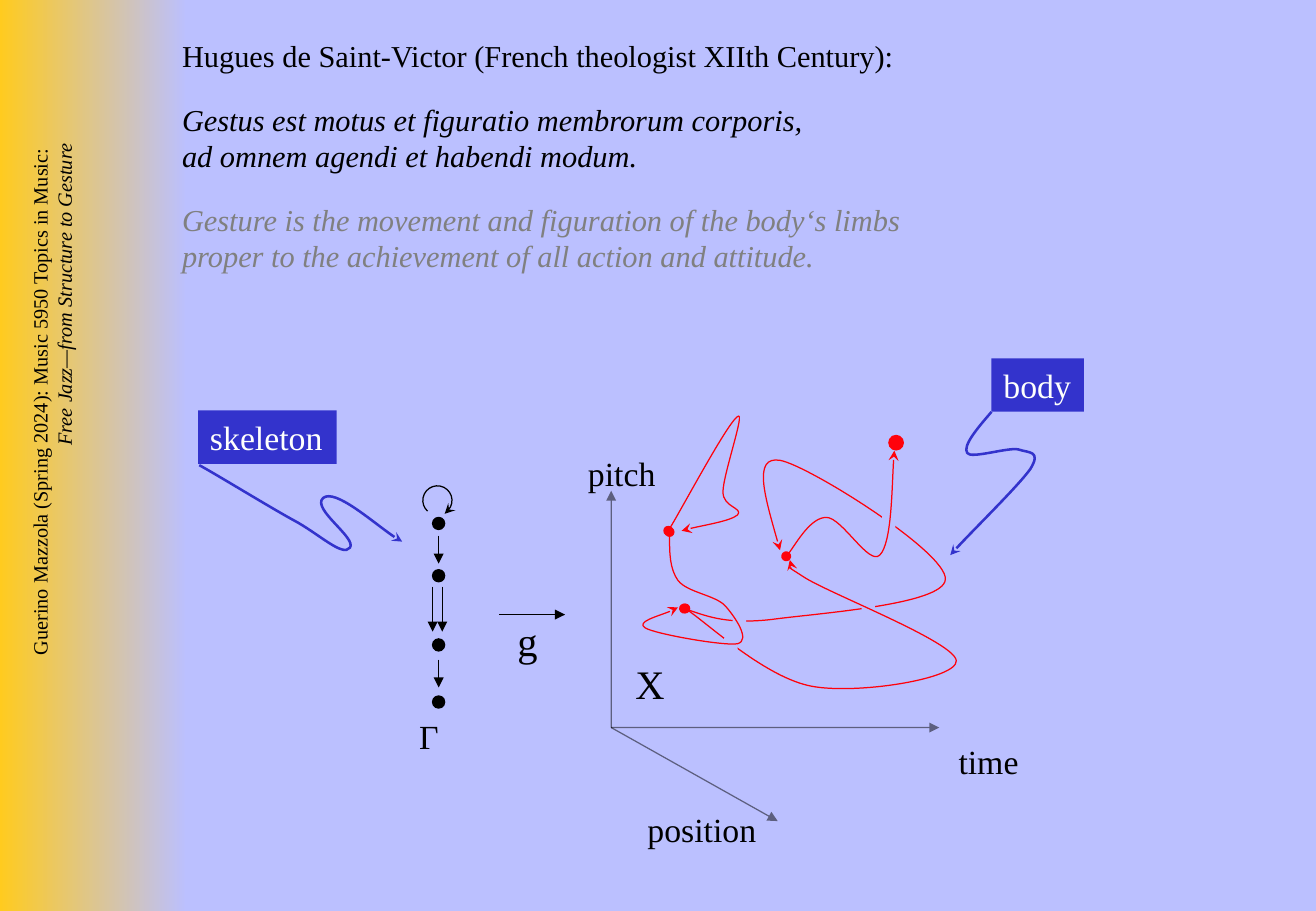
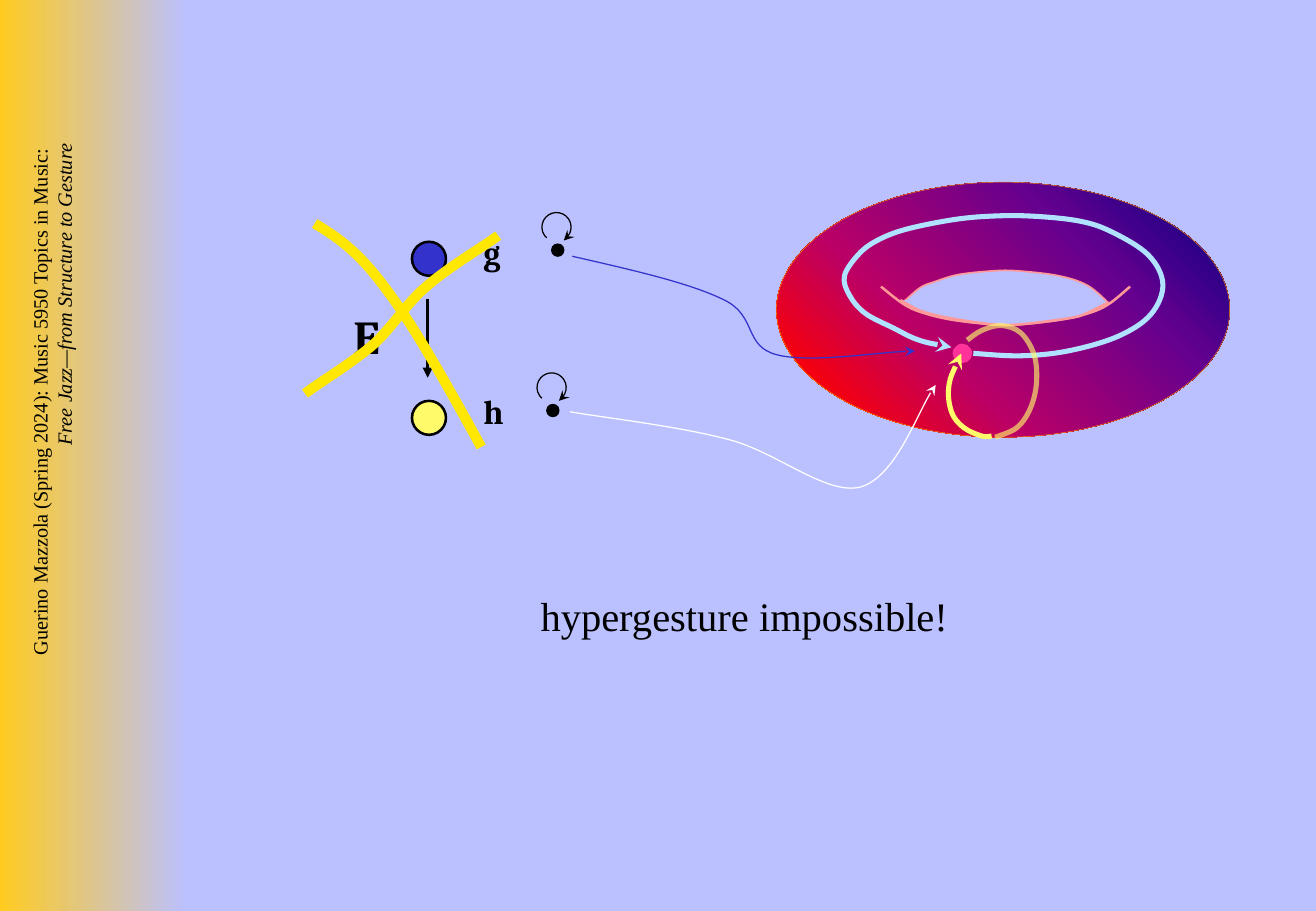
"""Build two slides on musical gestures: skeleton and body, and an impossible hypergesture."""
from dataclasses import dataclass
from typing import Any, Optional

from lxml.etree import SubElement
from pptx import Presentation
from pptx.dml.color import RGBColor
from pptx.enum.shapes import MSO_CONNECTOR, MSO_SHAPE
from pptx.enum.text import MSO_AUTO_SIZE, PP_ALIGN
from pptx.oxml.ns import qn
from pptx.util import Cm, Pt

ELLIPSE = MSO_SHAPE.OVAL
RECTANGLE = MSO_SHAPE.RECTANGLE
STRAIGHT = MSO_CONNECTOR.STRAIGHT
FIT_SHAPE = MSO_AUTO_SIZE.SHAPE_TO_FIT_TEXT
RIGHT = PP_ALIGN.RIGHT

SERIF = "Times New Roman"
CAMBRIA = "Cambria"
BACKGROUND = "BBC0FF"
GOLD = "FFCB1F"
BLACK = "000000"
GRAY = "808080"
WHITE = "FEFFFD"
BLUE = "3333CC"
RED = "FF020B"
YELLOW = "FFFA6A"
ROSE = "FF9999"
CROSS = "FFE700"
TORUS_STOPS = ((0, "FF8200"), (10, "FF0000"), (35, "BA0066"), (70, "66008F"), (100, "000082"))
LOOP_TILT = 311.2


@dataclass(frozen=True)
class Label:
    text: str
    left: float
    top: float
    width: float
    height: float
    size: int = 20
    color: str = BLACK
    fill: Optional[str] = None
    font: str = SERIF
    bold: bool = False


@dataclass(frozen=True)
class Stroke:
    color: str = BLACK
    width: float = 0.75
    head: Optional[str] = None
    tail: Optional[str] = None
    opacity: int = 100


@dataclass(frozen=True)
class Curve:
    coordinates: tuple[float, ...]
    stroke: Stroke
    fill: Optional[str] = None
    smooth: bool = False
    gaps: tuple[tuple[float, float], ...] = ()


ARROW = Stroke(tail="triangle")
AXIS = Stroke(tail="triangle", opacity=50)
GESTURE = Stroke(RED, head="oval", tail="stealth")
POINTER = Stroke(BLUE, 1.5, tail="stealth")

GESTURE_LABELS = (
    Label("Γ", 3.35, 5.84, 0.38, 0.44),
    Label("position", 5.23, 6.61, 1.1, 0.43, fill=BACKGROUND),
    Label("pitch", 4.74, 3.68, 0.76, 0.44),
    Label("time", 7.79, 6.05, 0.7, 0.44, fill=BACKGROUND),
    Label("X", 5.13, 5.38, 0.44, 0.5, 24),
    Label("g", 4.16, 5.02, 0.37, 0.5, 24),
    Label("body", 8.16, 2.95, 0.76, 0.44, color=WHITE, fill=BLUE),
    Label("skeleton", 1.63, 3.38, 1.14, 0.44, color=WHITE, fill=BLUE),
)
GESTURE_CURVES = (
    Curve((5.63, 5.01, 5.81, 5.07, 5.99, 5.14, 6.35, 5.1, 6.71, 5.05, 7.77, 4.98, 7.78, 4.77,
           7.8, 4.55, 6.65, 3.83, 6.42, 3.79, 6.19, 3.75, 6.31, 4.14, 6.42, 4.53),
          GESTURE, gaps=((7.26, 4.25), (7.09, 4.93), (6.03, 5.06))),
    Curve((5.5, 4.37, 5.6, 4.21, 5.99, 3.48, 6.07, 3.43, 6.14, 3.37, 5.95, 3.91, 5.95, 4.05,
           5.95, 4.18, 6.12, 4.18, 6.07, 4.24, 6.01, 4.29, 5.7, 4.34, 5.61, 4.37), GESTURE),
    Curve((5.64, 5.01, 5.81, 5.12, 6.31, 5.58, 6.68, 5.65, 7.05, 5.72, 7.88, 5.59, 7.87, 5.44,
           7.86, 5.29, 6.86, 4.9, 6.63, 4.76, 6.41, 4.62, 6.53, 4.64, 6.5, 4.61),
          GESTURE, gaps=((5.96, 5.25),)),
    Curve((6.47, 4.58, 6.52, 4.53, 6.67, 4.26, 6.8, 4.26, 6.93, 4.26, 7.15, 4.66, 7.24, 4.57,
           7.34, 4.47, 7.34, 3.89, 7.36, 3.71), GESTURE),
    Curve((5.51, 4.38, 5.51, 4.53, 5.51, 4.68, 5.58, 4.78, 5.66, 4.88, 5.89, 4.9, 5.97, 4.99,
           6.05, 5.08, 6.18, 5.27, 6.07, 5.3, 5.96, 5.32, 5.39, 5.22, 5.31, 5.17,
           5.23, 5.12, 5.53, 5.04, 5.58, 5), GESTURE),
    Curve((8.16, 3.39, 8.04, 3.53, 7.92, 3.67, 7.96, 3.73, 7.99, 3.78, 8.3, 3.68, 8.38, 3.7,
           8.47, 3.73, 8.57, 3.71, 8.48, 3.86, 8.38, 4, 7.95, 4.42, 7.82, 4.57), POINTER),
    Curve((1.64, 3.83, 1.77, 3.9, 2.21, 4.17, 2.41, 4.28, 2.62, 4.39, 2.82, 4.59, 2.88, 4.51,
           2.94, 4.43, 2.56, 4.19, 2.66, 4.1, 2.76, 4.02, 3.17, 4.39, 3.31, 4.46), POINTER),
)
TORUS_HOLE = (
    Curve((7.25, 2.36, 7.43, 2.5, 7.58, 2.57, 7.82, 2.63, 8.16, 2.67, 8.39, 2.67, 8.79, 2.62,
           9.08, 2.53, 9.3, 2.36), Stroke(ROSE, 1.5), smooth=True),
    Curve((7.42, 2.5, 7.57, 2.37, 7.69, 2.32, 7.89, 2.26, 8.18, 2.23, 8.37, 2.23, 8.71, 2.27,
           8.95, 2.35, 9.13, 2.5), Stroke(ROSE, 1), BACKGROUND, True),
    Curve((7.41, 2.47, 7.58, 2.56, 7.82, 2.62, 8.17, 2.67, 8.4, 2.67, 8.8, 2.62, 8.94, 2.58,
           9.12, 2.49), Stroke(ROSE, 1.5), BACKGROUND, True),
)
TORUS_CURVES = (
    Curve((8.01, 2.91, 8.4, 2.93, 8.79, 2.89, 9.2, 2.77, 9.47, 2.59, 9.57, 2.34, 9.45, 2.1,
           9.15, 1.91, 8.88, 1.82, 8.49, 1.78, 8.16, 1.78, 7.84, 1.81, 7.45, 1.89, 7.22, 1.98,
           7.07, 2.09, 6.95, 2.27, 6.99, 2.43, 7.12, 2.58, 7.35, 2.7, 7.56, 2.8, 7.83, 2.86),
          Stroke("B0E2FF", 3, tail="stealth"), smooth=True),
    Curve((4.71, 2.11, 5.19, 2.22, 5.68, 2.33, 5.96, 2.47, 6.23, 2.6, 6.12, 2.85, 6.39, 2.92,
           6.65, 2.99, 7.29, 2.89, 7.53, 2.89), Stroke(BLUE, tail="stealth")),
    Curve((7.91, 2.91, 7.81, 3.17, 7.83, 3.39, 7.93, 3.52, 8.08, 3.59, 8.16, 3.59),
          Stroke(YELLOW, 3, head="stealth"), smooth=True),
    Curve((8.19, 3.6, 8.37, 3.52, 8.48, 3.36, 8.53, 3.15, 8.51, 2.92, 8.4, 2.74, 8.24, 2.68,
           8.08, 2.72, 7.96, 2.8), Stroke(YELLOW, 3, opacity=64), smooth=True),
    Curve((4.69, 3.39, 4.91, 3.43, 5.6, 3.51, 6, 3.62, 6.39, 3.72, 6.8, 4.08, 7.08, 4.01,
           7.36, 3.93, 7.57, 3.34, 7.7, 3.17), Stroke("FFFFFF", tail="stealth")),
)
CROSS_CURVES = (
    Curve((4.1, 1.94, 4.01, 2.01, 3.69, 2.2, 3.52, 2.35, 3.35, 2.49, 3.24, 2.68, 3.08, 2.83,
           2.91, 2.98, 2.63, 3.15, 2.51, 3.24), Stroke(CROSS, 6)),
    Curve((2.59, 1.84, 2.77, 1.95, 2.94, 2.06, 3.17, 2.37, 3.4, 2.67, 3.68, 3.17, 3.96, 3.68),
          Stroke(CROSS, 6)),
)
TORUS_LABELS = (
    Label("E", 2.81, 2.48, 0.45, 0.57, 28, font=CAMBRIA, bold=True),
    Label("g", 3.88, 1.86, 0.36, 0.43, font=CAMBRIA, bold=True),
    Label("h", 3.88, 3.17, 0.36, 0.43, font=CAMBRIA, bold=True),
    Label("hypergesture impossible!", 4.35, 4.82, 3.56, 0.5, 24),
)


def inches(value: float) -> Cm:
    """Turn a length in inches into a Cm length."""
    return Cm(value * 2.54)


def rgb(color: str) -> RGBColor:
    """Turn a hex string into a colour."""
    return RGBColor.from_string(color)


def set_fill(shape: Any, color: Optional[str]) -> None:
    """Fill a shape with one colour, or leave it empty."""
    if color is None:
        shape.fill.background()
    else:
        shape.fill.solid()
        shape.fill.fore_color.rgb = rgb(color)


def set_gradient(shape: Any, stops: tuple[tuple[int, str], ...], angle: int) -> None:
    """Fill a shape with a linear gradient."""
    shape.fill.gradient()
    shape.fill.gradient_angle = angle
    stop_list = next(shape.element.iter(qn("a:gsLst")))
    for stop in list(stop_list):
        stop_list.remove(stop)
    for position, color in stops:
        stop = SubElement(stop_list, qn("a:gs"), pos=str(position * 1000))
        SubElement(stop, qn("a:srgbClr"), val=color)


def set_stroke(shape: Any, stroke: Stroke) -> None:
    """Give a shape or connector its line, opacity and arrowheads."""
    shape.line.width = Pt(stroke.width)
    shape.line.color.rgb = rgb(stroke.color)
    line = shape.element.spPr.find(qn("a:ln"))
    if stroke.opacity < 100:
        color = next(line.iter(qn("a:srgbClr")))
        SubElement(color, qn("a:alpha"), val=str(stroke.opacity * 1000))
    for tag, kind in (("a:headEnd", stroke.head), ("a:tailEnd", stroke.tail)):
        if kind:
            SubElement(line, qn(tag), type=kind)


def add_preset(slide: Any, kind: Any, left: float, top: float, width: float, height: float,
               fill: Optional[str] = None, stroke: Optional[Stroke] = None,
               rotation: float = 0) -> Any:
    """Add a preset shape without shadow."""
    shape = slide.shapes.add_shape(kind, inches(left), inches(top), inches(width), inches(height))
    shape.shadow.inherit = False
    shape.rotation = rotation
    set_fill(shape, fill)
    if stroke:
        set_stroke(shape, stroke)
    else:
        shape.line.fill.background()
    return shape


def add_arrow(slide: Any, start: tuple[float, float], end: tuple[float, float],
              stroke: Stroke = ARROW) -> None:
    """Add a straight arrow."""
    connector = slide.shapes.add_connector(STRAIGHT, *(inches(value) for value in start + end))
    set_stroke(connector, stroke)
    SubElement(connector.element.spPr, qn("a:effectLst"))


def smooth_points(anchors: list[tuple[float, float]]) -> list[tuple[float, float]]:
    """Give the Bezier points of a smooth curve through the anchors."""
    padded = [anchors[0], *anchors, anchors[-1]]
    points = [anchors[0]]
    for before, start, end, after in zip(padded, padded[1:], padded[2:], padded[3:]):
        points.append((start[0] + (end[0] - before[0]) / 6, start[1] + (end[1] - before[1]) / 6))
        points.append((end[0] - (after[0] - start[0]) / 6, end[1] - (after[1] - start[1]) / 6))
        points.append(end)
    return points


def add_curve(slide: Any, curve: Curve) -> None:
    """Add a Bezier curve and the gaps cut into it."""
    points = list(zip(curve.coordinates[::2], curve.coordinates[1::2]))
    if curve.smooth:
        points = smooth_points(points)
    vertices = [(inches(x), inches(y)) for x, y in points]
    builder = slide.shapes.build_freeform(*vertices[0])
    builder.add_line_segments(vertices[1:], close=False)
    shape = builder.convert_to_shape()
    segments = list(shape.element.iter(qn("a:lnTo")))
    outline = segments[0].getparent()
    for index in range(0, len(segments), 3):
        bezier = SubElement(outline, qn("a:cubicBezTo"))
        for segment in segments[index:index + 3]:
            bezier.append(segment[0])
            outline.remove(segment)
    shape.shadow.inherit = False
    set_fill(shape, curve.fill)
    set_stroke(shape, curve.stroke)
    for left, top in curve.gaps:
        add_preset(slide, RECTANGLE, left, top, 0.11, 0.11, BACKGROUND)


def add_text(slide: Any, label: Label, wrap: bool = False) -> Any:
    """Add a text box, one paragraph a line of the label."""
    shape = slide.shapes.add_textbox(inches(label.left), inches(label.top),
                                     inches(label.width), inches(label.height))
    if label.fill:
        set_fill(shape, label.fill)
    frame = shape.text_frame
    frame.word_wrap = wrap
    frame.auto_size = FIT_SHAPE
    frame.text = label.text
    for paragraph in frame.paragraphs:
        for run in paragraph.runs:
            run.font.name = label.font
            run.font.size = Pt(label.size)
            run.font.bold = label.bold
            run.font.color.rgb = rgb(label.color)
    for line_break in shape.element.iter(qn("a:br")):
        SubElement(line_break, qn("a:rPr"), sz=str(label.size * 100))
    return shape


def add_node(slide: Any, x: float, y: float) -> None:
    """Add a black vertex centred on a point."""
    add_preset(slide, ELLIPSE, x - 0.05, y - 0.05, 0.1, 0.1, BLACK, Stroke())


def add_loop(slide: Any, x: float, y: float) -> None:
    """Add a vertex with a loop arrow above it."""
    add_preset(slide, ELLIPSE, x - 0.13, y - 0.31, 0.24, 0.24, None, Stroke(), LOOP_TILT)
    add_preset(slide, RECTANGLE, x - 0.08, y - 0.16, 0.15, 0.15, BACKGROUND, None, LOOP_TILT)
    add_arrow(slide, (x + 0.1, y - 0.13), (x + 0.05, y - 0.08), Stroke(tail="stealth"))
    add_node(slide, x, y)


def add_course_slide(presentation: Any) -> Any:
    """Add a blank slide with the gold band and the course title."""
    slide = presentation.slides.add_slide(presentation.slide_layouts[6])
    set_fill(slide.background, BACKGROUND)
    band = add_preset(slide, RECTANGLE, 0, 0, 1.54, 7.5)
    set_gradient(band, ((0, GOLD), (100, BACKGROUND)), 0)
    course = add_text(slide, Label(
        "Guerino Mazzola (Spring 2024): Music 5950 Topics in Music: \v"
        "Free Jazz—from Structure to Gesture", -2.4, 3.66, 5.65, 0.5, 12), wrap=True)
    course.rotation = 270
    paragraph = course.text_frame.paragraphs[0]
    paragraph.alignment = RIGHT
    paragraph.runs[1].font.italic = True
    return slide


def build_gesture_slide(presentation: Any) -> None:
    """Draw the quotation and the gesture from skeleton to body."""
    slide = add_course_slide(presentation)
    quotation = add_text(slide, Label(
        "Hugues de Saint-Victor (French theologist XIIth Century):\n"
        "Gestus est motus et figuratio membrorum corporis,\vad omnem agendi et habendi modum.\n"
        "Gesture is the movement and figuration of the body‘s limbs \v"
        "proper to the achievement of all action and attitude.", 1.4, 0.26, 9.43, 2.06, 18), True)
    for index, paragraph in enumerate(quotation.text_frame.paragraphs):
        paragraph.space_after = Pt(16)
        for run in paragraph.runs:
            run.font.italic = index > 0
            run.font.color.rgb = rgb(GRAY if index == 2 else BLACK)
    add_loop(slide, 3.61, 4.31)
    for y in (4.74, 5.31, 5.78):
        add_node(slide, 3.61, y)
    for x, top, bottom in ((3.61, 4.41, 4.64), (3.61, 5.43, 5.66), (3.56, 4.83, 5.2), (3.64, 4.83, 5.2)):
        add_arrow(slide, (x, top), (x, bottom))
    for label in GESTURE_LABELS:
        add_text(slide, label)
    for end in ((6.4, 6.76), (7.73, 5.99), (5.03, 4.04)):
        add_arrow(slide, (5.03, 5.99), end, AXIS)
    for curve in GESTURE_CURVES:
        add_curve(slide, curve)
    add_preset(slide, ELLIPSE, 7.31, 3.58, 0.13, 0.13, RED)
    add_arrow(slide, (4.11, 5.06), (4.65, 5.06))


def build_torus_slide(presentation: Any) -> None:
    """Draw the crossed-out arrow and the two loops on the torus."""
    slide = add_course_slide(presentation)
    torus = add_preset(slide, ELLIPSE, 6.39, 1.5, 3.73, 2.1, None, Stroke("FF9900", 0.25))
    set_gradient(torus, TORUS_STOPS, 45)
    for curve in TORUS_HOLE:
        add_curve(slide, curve)
    add_loop(slide, 4.59, 2.06)
    add_loop(slide, 4.55, 3.38)
    for top, color in ((3.3, YELLOW), (1.99, BLUE)):
        add_preset(slide, ELLIPSE, 3.39, top, 0.28, 0.28, color, Stroke(width=1.5))
    add_arrow(slide, (3.52, 2.46), (3.52, 3.11), Stroke(width=1.5, tail="triangle"))
    add_preset(slide, ELLIPSE, 7.84, 2.83, 0.16, 0.16, "FF3399")
    for curve in TORUS_CURVES:
        add_curve(slide, curve)
    for label in TORUS_LABELS:
        add_text(slide, label)
    for curve in CROSS_CURVES:
        add_curve(slide, curve)


def main() -> None:
    """Build and save the presentation."""
    presentation = Presentation()
    presentation.slide_width = inches(10.83)
    presentation.slide_height = inches(7.5)
    build_gesture_slide(presentation)
    build_torus_slide(presentation)
    presentation.save("out.pptx")


if __name__ == "__main__":
    main()
